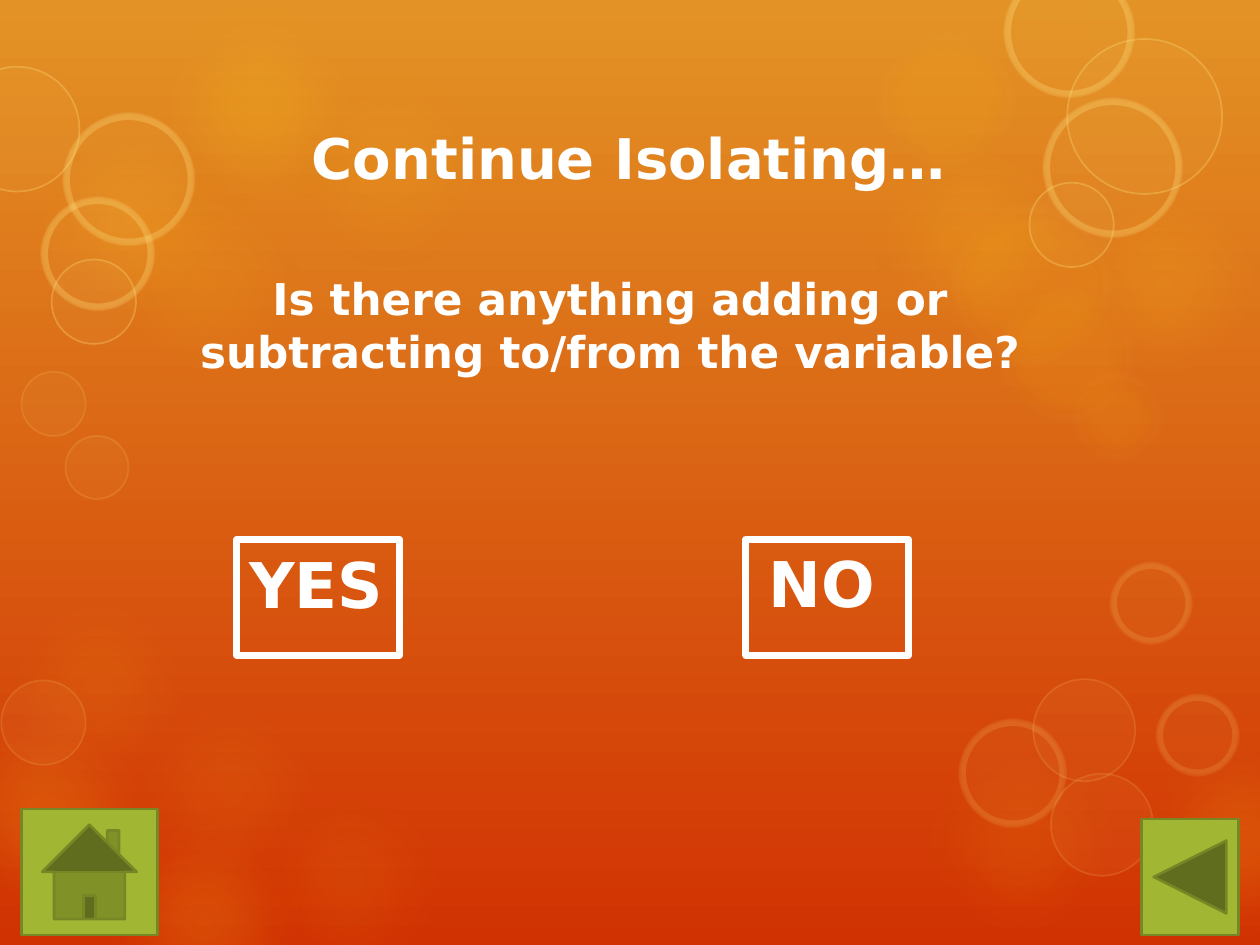
"""Build a quiz slide with yes/no buttons over an orange bubble backdrop."""
from dataclasses import dataclass
from typing import NamedTuple, Optional

from lxml import etree
from pptx import Presentation
from pptx import util as u
from pptx.dml import color
from pptx.enum import shapes, text
from pptx.oxml import ns

EMU_PER_PX = 9144
PAGE_WIDTH, PAGE_HEIGHT = 1000, 750


@dataclass(frozen=True)
class Theme:
    sky: str = "E39325"
    ember: str = "D13202"
    amber: str = "FDC61B"
    pale: str = "FFE281"
    rim: str = "FEEBAE"
    white: str = "FFFFFF"
    leaf: str = "A1B633"
    moss: str = "778726"
    font: str = "DejaVu Sans"
    title_size: int = 32
    question_size: int = 25
    answer_size: int = 36


THEME = Theme()


class Circle(NamedTuple):
    left: int
    top: int
    size: int = 209


class Box(NamedTuple):
    left: int
    top: int
    width: int
    height: int


@dataclass(frozen=True)
class BubbleStyle:
    fill: str
    opacity: int
    soft: float = 31
    rim: Optional[str] = None
    rim_width: int = 0
    rim_opacity: int = 0


@dataclass(frozen=True)
class Label:
    box: Box
    wording: str
    size: int
    centred: bool = False
    before: int = 0
    after: int = 0


@dataclass(frozen=True)
class Button:
    kind: shapes.MSO_SHAPE
    box: Box
    line: str
    line_width: float
    fill: Optional[str] = None


def glow(opacity: int) -> BubbleStyle:
    """Return a blurred, rimless bubble style."""
    return BubbleStyle(THEME.amber, opacity)


def ring(rim_width: int, rim_opacity: int) -> BubbleStyle:
    """Return a pale bubble style whose thin rims stay crisp."""
    soft = 1 if rim_width > 1 else 0
    return BubbleStyle(THEME.pale, 5, soft, THEME.pale, rim_width, rim_opacity)


HALO = BubbleStyle(THEME.amber, 10, 12, THEME.rim, 14, 6)

BUBBLES = [
    (glow(8), [Circle(-26, 442), Circle(77, 524), Circle(173, 596)]),
    (glow(10), [Circle(57, 120), Circle(205, 31), Circle(706, 562), Circle(675, 262, 133)]),
    (glow(16), [Circle(57, 627), Circle(881, 562), Circle(-69, 541)]),
    (glow(20), [Circle(101, -18)]),
    (glow(15), [Circle(0, 72), Circle(820, 120), Circle(669, 86)]),
    (HALO, [Circle(694, 23, 114), Circle(752, 159, 133), Circle(789, 224, 114),
            Circle(847, 291, 79)]),
    (ring(1, 15), [Circle(1, 540, 67), Circle(834, 614, 81), Circle(820, 539, 81),
                   Circle(17, 295, 51), Circle(52, 346, 50)]),
    (ring(5, 15), [Circle(763, 573, 81), Circle(883, 448, 61), Circle(920, 553, 61)]),
    (ring(1, 30), [Circle(-36, 53, 99), Circle(41, 206, 67), Circle(847, 31, 123),
                   Circle(817, 145, 67)]),
    (ring(5, 30), [Circle(52, 92, 100), Circle(35, 159, 85), Circle(799, -24, 99),
                   Circle(830, 80, 106)]),
]

LABELS = [
    Label(Box(110, 74, 779, 101), "Continue Isolating…", THEME.title_size, True),
    Label(Box(110, 198, 748, 119),
          "Is there anything adding or subtracting to/from the variable?",
          THEME.question_size, True, 5, 6),
    Label(Box(188, 428, 142, 71), "YES", THEME.answer_size),
    Label(Box(600, 427, 142, 71), "NO", THEME.answer_size),
]

KINDS = shapes.MSO_SHAPE
BUTTONS = [
    Button(KINDS.ACTION_BUTTON_CUSTOM, Box(188, 428, 129, 92), THEME.white, 4),
    Button(KINDS.ACTION_BUTTON_CUSTOM, Box(592, 428, 129, 92), THEME.white, 4),
    Button(KINDS.ACTION_BUTTON_HOME, Box(17, 642, 108, 100), THEME.moss, 1.5, THEME.leaf),
    Button(KINDS.ACTION_BUTTON_BACK_OR_PREVIOUS, Box(906, 650, 77, 92),
           THEME.moss, 1.5, THEME.leaf),
]


def emu(px: int) -> int:
    """Convert px to EMU."""
    return px * EMU_PER_PX


def rgb(value: str) -> color.RGBColor:
    """Convert a hex string to a colour."""
    return color.RGBColor.from_string(value)


def paint(shape, fill: Optional[str], line: Optional[str], width: float) -> None:
    """Set the fill and line of a shape and drop its shadow."""
    shape.shadow.inherit = False
    if fill:
        shape.fill.solid()
        shape.fill.fore_color.rgb = rgb(fill)
    else:
        shape.fill.background()
    if line:
        shape.line.color.rgb = rgb(line)
        shape.line.width = u.Pt(width)
    else:
        shape.line.fill.background()


def draw_bubble(page, circle: Circle, style: BubbleStyle) -> None:
    """Draw one translucent bubble."""
    left, top, size = map(emu, circle)
    bubble = page.shapes.add_shape(KINDS.OVAL, left, top, size, size)
    paint(bubble, style.fill, style.rim, style.rim_width)
    properties = bubble.element.spPr
    tints = properties.iter(ns.qn("a:srgbClr"))
    for tint, opacity in zip(tints, (style.opacity, style.rim_opacity)):
        etree.SubElement(tint, ns.qn("a:alpha"), val=str(opacity * 1000))
    if style.soft:
        effects = properties.find(ns.qn("a:effectLst"))
        etree.SubElement(effects, ns.qn("a:softEdge"), rad=str(int(u.Pt(style.soft))))


def draw_label(page, label: Label) -> None:
    """Draw one bold white text."""
    frame = page.shapes.add_textbox(*map(emu, label.box)).text_frame
    frame.word_wrap = True
    frame.text = label.wording
    para = frame.paragraphs[0]
    if label.centred:
        frame.vertical_anchor = text.MSO_ANCHOR.MIDDLE
        para.alignment = text.PP_ALIGN.CENTER
    para.space_before, para.space_after = u.Pt(label.before), u.Pt(label.after)
    font = para.runs[0].font
    font.name, font.size, font.bold = THEME.font, u.Pt(label.size), True
    font.color.rgb = rgb(THEME.white)


def draw_button(page, button: Button) -> None:
    """Draw one action button."""
    shape = page.shapes.add_shape(button.kind, *map(emu, button.box))
    paint(shape, button.fill, button.line, button.line_width)


def main() -> None:
    """Build and save the deck."""
    deck = Presentation()
    deck.slide_width, deck.slide_height = emu(PAGE_WIDTH), emu(PAGE_HEIGHT)
    page = deck.slides.add_slide(deck.slide_layouts[6])
    backdrop = page.background.fill
    backdrop.gradient()
    backdrop.gradient_angle = 270
    for stop, tone in zip(backdrop.gradient_stops, (THEME.sky, THEME.ember)):
        stop.color.rgb = rgb(tone)
    for style, circles in BUBBLES:
        for circle in circles:
            draw_bubble(page, circle, style)
    for label in LABELS:
        draw_label(page, label)
    for button in BUTTONS:
        draw_button(page, button)
    deck.save("out.pptx")


if __name__ == "__main__":
    main()
